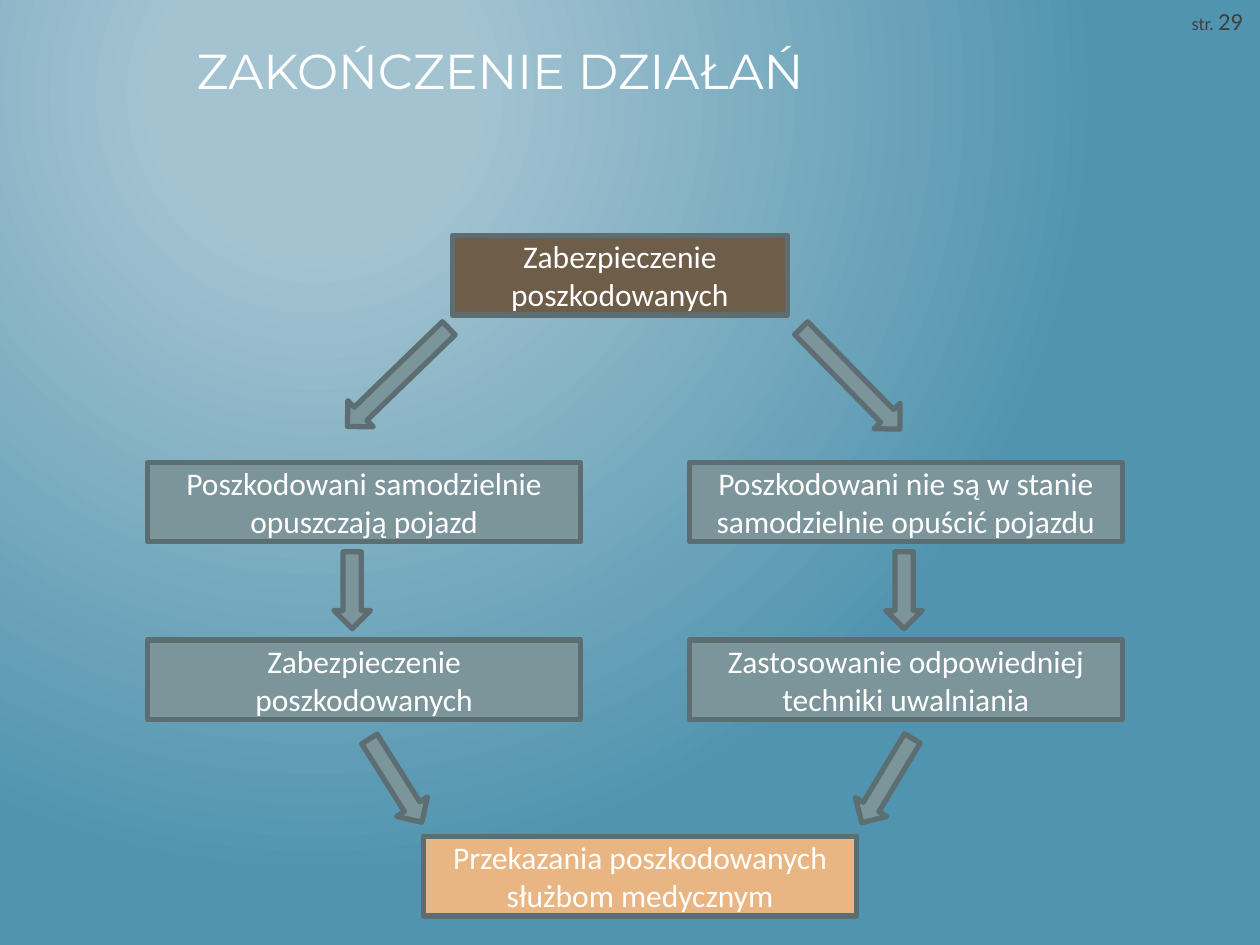
from lxml.etree import SubElement
from pptx import Presentation
from pptx.dml.color import RGBColor
from pptx.enum.shapes import MSO_SHAPE as Shape
from pptx.enum.text import MSO_ANCHOR as Anchor, PP_ALIGN as Align
from pptx.oxml.ns import qn
from pptx.util import Inches, Pt

COLORS = {
    "glow": "A3C3D1", "sea": "5194AF", "outline": "5C6E72",
    "start": "6E5D49", "step": "7C959A", "finish": "E9B683",
    "white": "FFFFFF", "page": "3F3F3F",
}
BOX_HEIGHT = 0.63
WIDE = 3.44
LEFT, RIGHT = 1.17, 5.47
CHOICE_TOP, ACTION_TOP = 3.67, 5.08
ARROW_HEIGHT = 0.29


def rgb(name):
    return RGBColor.from_string(COLORS[name])


def set_values(target, values):
    for name, value in values.items():
        setattr(target, name, value)


def place(target, left, top, width, height):
    values = dict(left=left, top=top, width=width, height=height)
    set_values(target, {name: Inches(value) for name, value in values.items()})


def write(paragraph, text, size, color, font="Calibri"):
    run = paragraph.add_run()
    run.text = text
    set_values(run.font, {"name": font, "size": Pt(size), "bold": False})
    run.font.color.rgb = rgb(color)


def paint_background(slide):
    """Circular gradient, centred in the upper left part of the slide."""
    fill = slide.background.fill
    fill.gradient()
    for stop, (position, color) in zip(fill.gradient_stops, [(0.2, "glow"), (1, "sea")]):
        stop.position = position
        stop.color.rgb = rgb(color)
    gradient = next(slide.element.iter(qn("a:gradFill")))
    gradient.remove(gradient.find(qn("a:lin")))
    circle = SubElement(gradient, qn("a:path"), {"path": "circle"})
    SubElement(circle, qn("a:fillToRect"),
               {"l": "50000", "t": "20000", "r": "100000", "b": "100000"})


def add_heading(slide, left, top, width, height):
    title = slide.shapes.title
    place(title, left, top, width, height)
    set_values(title.text_frame, {"vertical_anchor": Anchor.TOP, "word_wrap": True})
    paragraph = title.text_frame.paragraphs[0]
    paragraph.alignment = Align.LEFT
    write(paragraph, "ZAKOŃCZENIE DZIAŁAŃ", 28, "white", "Montserrat")


def add_page_number(slide, left, top, width, height):
    page = slide.shapes.add_textbox(*map(Inches, (left, top, width, height)))
    paragraph = page.text_frame.paragraphs[0]
    write(paragraph, "str. ", 10.5, "page")
    write(paragraph, "29", 14, "page")


def add_outlined(slide, preset, left, top, width, height, color):
    shape = slide.shapes.add_shape(preset, *map(Inches, (left, top, width, height)))
    shape.shadow.inherit = False
    shape.fill.solid()
    shape.fill.fore_color.rgb = rgb(color)
    shape.line.color.rgb = rgb("outline")
    shape.line.width = Pt(3)
    SubElement(shape.line._get_or_add_ln(), qn("a:round"))
    return shape


def add_step(slide, text, left, top, width=WIDE, color="step"):
    step = add_outlined(slide, Shape.RECTANGLE, left, top, width, BOX_HEIGHT, color)
    set_values(step.text_frame, {"vertical_anchor": Anchor.MIDDLE, "word_wrap": True})
    paragraph = step.text_frame.paragraphs[0]
    paragraph.alignment = Align.CENTER
    write(paragraph, text, 18, "white")


def add_arrow(slide, left, top, length, angle):
    arrow = add_outlined(slide, Shape.RIGHT_ARROW, left, top, length, ARROW_HEIGHT, "step")
    arrow.rotation = angle


def add_flow(slide):
    add_step(slide, "Zabezpieczenie poszkodowanych", 3.59, 1.87, 2.66, "start")
    branches = [
        (LEFT, "Poszkodowani samodzielnie opuszczają pojazd",
         "Zabezpieczenie poszkodowanych"),
        (RIGHT, "Poszkodowani nie są w stanie samodzielnie opuścić pojazdu",
         "Zastosowanie odpowiedniej techniki uwalniania"),
    ]
    for left, choice, action in branches:
        add_step(slide, choice, left, CHOICE_TOP)
        add_step(slide, action, left, ACTION_TOP)
    add_step(slide, "Przekazania poszkodowanych służbom medycznym", 3.36, 6.64, color="finish")

    arrows = [
        (2.6, 2.85, 1.12, 135.9), (6.19, 2.86, 1.12, 45.6),
        (2.49, 4.54, 0.61, 90), (6.87, 4.54, 0.61, 90),
        (2.75, 6.05, 0.78, 57.8), (6.65, 6.05, 0.78, 121),
    ]
    for arrow in arrows:
        add_arrow(slide, *arrow)


def main():
    deck = Presentation()
    set_values(deck, {"slide_width": Inches(10), "slide_height": Inches(7.5)})
    slide = deck.slides.add_slide(deck.slide_layouts.get_by_name("Title Only"))
    paint_background(slide)
    add_heading(slide, 1.46, 0.27, 7.8, 0.96)
    add_page_number(slide, 9.36, 0, 0.64, 0.27)
    add_flow(slide)
    deck.save("out.pptx")


if __name__ == "__main__":
    main()
